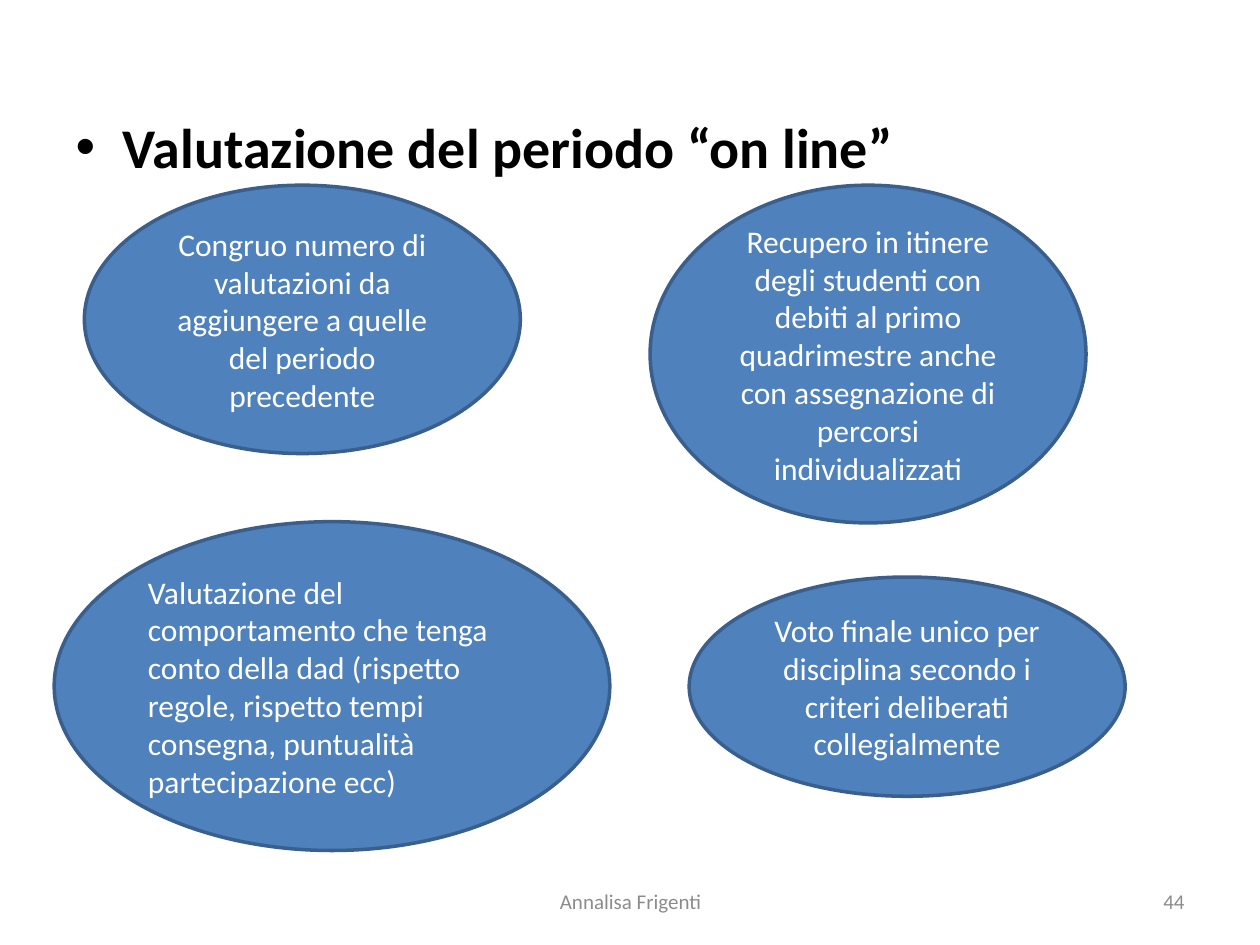
import pptx
import pptx.dml.color
import pptx.enum.shapes
import pptx.enum.text
import pptx.util

BLACK = pptx.dml.color.RGBColor(0x00, 0x00, 0x00)
WHITE = pptx.dml.color.RGBColor(0xFF, 0xFF, 0xFF)
GREY = pptx.dml.color.RGBColor(0x8C, 0x8C, 0x8C)
BLUE = pptx.dml.color.RGBColor(0x4F, 0x81, 0xBD)
DARK_BLUE = pptx.dml.color.RGBColor(0x3A, 0x5F, 0x8C)
LEFT = pptx.enum.text.PP_ALIGN.LEFT
CENTER = pptx.enum.text.PP_ALIGN.CENTER
RIGHT = pptx.enum.text.PP_ALIGN.RIGHT
COLUMNS, ROWS = 100, 75


class SlideBuilder:
    """Place styled elements on a slide using a grid of 100 columns by 75 rows."""

    formats = {
        "heading": {"size": pptx.util.Pt(32), "bold": True, "name": "Calibri"},
        "ellipse": {"size": pptx.util.Pt(18), "name": "Calibri"},
        "footer": {"size": pptx.util.Pt(12), "name": "Calibri"},
    }
    colors = {"heading": BLACK, "ellipse": WHITE, "footer": GREY}

    def __init__(self, presentation):
        self.column = presentation.slide_width / COLUMNS
        self.row = presentation.slide_height / ROWS
        self.slide = presentation.slides.add_slide(presentation.slide_layouts[1])
        title = self.slide.shapes.title
        title.element.getparent().remove(title.element)

    def box(self, left, top, width, height):
        return (round(left * self.column), round(top * self.row),
                round(width * self.column), round(height * self.row))

    def set_text(self, shape, text, style, alignment, anchor):
        frame = shape.text_frame
        frame.word_wrap = True
        frame.vertical_anchor = anchor
        paragraph = frame.paragraphs[0]
        paragraph.alignment = alignment
        run = paragraph.add_run()
        run.text = text
        for name, value in self.formats[style].items():
            setattr(run.font, name, value)
        run.font.color.rgb = self.colors[style]

    def heading(self, text, area):
        body = self.slide.placeholders[1]
        for name, value in zip(("left", "top", "width", "height"), self.box(*area)):
            setattr(body, name, value)
        self.set_text(body, text, "heading", LEFT, pptx.enum.text.MSO_ANCHOR.TOP)

    def ellipse(self, text, area, alignment=CENTER):
        shape = self.slide.shapes.add_shape(
            pptx.enum.shapes.MSO_SHAPE.OVAL, *self.box(*area))
        shape.shadow.inherit = False
        shape.fill.solid()
        shape.fill.fore_color.rgb = BLUE
        shape.line.color.rgb = DARK_BLUE
        shape.line.width = pptx.util.Pt(2)
        self.set_text(shape, text, "ellipse", alignment, pptx.enum.text.MSO_ANCHOR.MIDDLE)

    def footer(self, text, area, alignment):
        shape = self.slide.shapes.add_textbox(*self.box(*area))
        self.set_text(shape, text, "footer", alignment, pptx.enum.text.MSO_ANCHOR.MIDDLE)


def main():
    presentation = pptx.Presentation()
    presentation.slide_width = pptx.util.Inches(10)
    presentation.slide_height = pptx.util.Inches(7.5)
    builder = SlideBuilder(presentation)
    builder.footer("Annalisa Frigenti", (34.2, 69.5, 31.7, 4), CENTER)
    builder.footer("44", (71.7, 69.5, 23.3, 4), RIGHT)
    builder.heading("Valutazione del periodo “on line”", (5, 8.4, 90, 58.6))
    builder.ellipse("Congruo numero di valutazioni da aggiungere a quelle "
                    "del periodo precedente", (6.7, 14.7, 34.6, 21.3))
    builder.ellipse("Voto finale unico per disciplina secondo i criteri "
                    "deliberati collegialmente", (54.7, 45.8, 34.6, 17.4))
    builder.ellipse("Recupero in itinere degli studenti con debiti al primo "
                    "quadrimestre anche con assegnazione di percorsi "
                    "individualizzati", (51.6, 14.7, 34.6, 26.8))
    builder.ellipse("Valutazione del comportamento che tenga conto della dad "
                    "(rispetto regole, rispetto tempi consegna, puntualità "
                    "partecipazione ecc)", (4.3, 41.4, 44.1, 26.1), LEFT)
    presentation.save("out.pptx")


if __name__ == "__main__":
    main()
